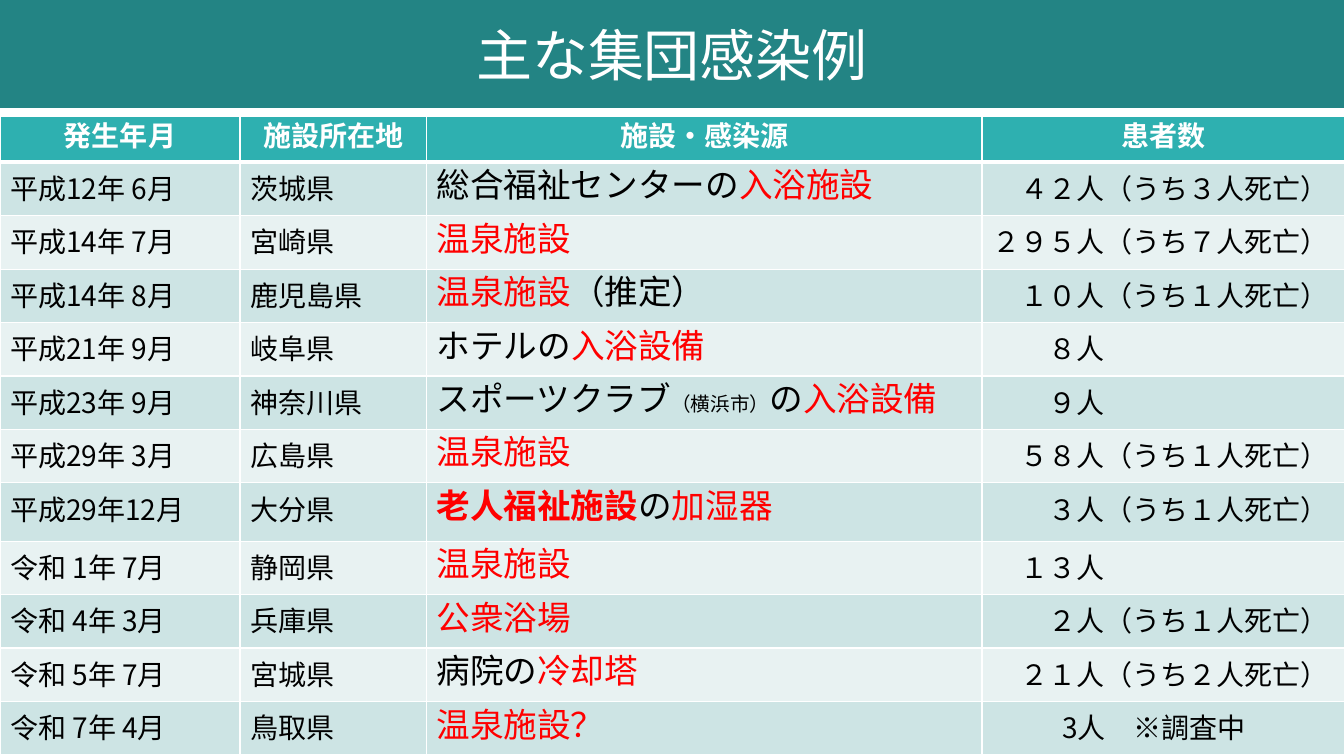
from dataclasses import dataclass

from lxml import etree
from pptx import Presentation
from pptx.dml.color import RGBColor
from pptx.enum.shapes import MSO_SHAPE
from pptx.enum.text import MSO_ANCHOR, PP_ALIGN
from pptx.oxml.ns import qn
from pptx.util import Inches, Pt

RECTANGLE = MSO_SHAPE.RECTANGLE
MIDDLE = MSO_ANCHOR.MIDDLE
LEFT, CENTER = PP_ALIGN.LEFT, PP_ALIGN.CENTER

TITLE = "主な集団感染例"
HEADINGS = ("発生年月", "施設所在地", "施設・感染源", "患者数")
PLAIN, SOURCE, STRONG, SMALL = "plain", "source", "strong", "small"

# month, prefecture, facility parts, indent of the count in characters, count
OUTBREAKS = [
    ("平成12年 6月", "茨城県", [("総合福祉センターの", PLAIN), ("入浴施設", SOURCE)], 1, "４２人（うち３人死亡）"),
    ("平成14年 7月", "宮崎県", [("温泉施設", SOURCE)], 0, "２９５人（うち７人死亡）"),
    ("平成14年 8月", "鹿児島県", [("温泉施設", SOURCE), ("（推定）", PLAIN)], 1, "１０人（うち１人死亡）"),
    ("平成21年 9月", "岐阜県", [("ホテルの", PLAIN), ("入浴設備", SOURCE)], 2, "８人"),
    ("平成23年 9月", "神奈川県",
     [("スポーツクラブ", PLAIN), ("（横浜市）", SMALL), ("の", PLAIN), ("入浴設備", SOURCE)], 2, "９人"),
    ("平成29年 3月", "広島県", [("温泉施設", SOURCE)], 1, "５８人（うち１人死亡）"),
    ("平成29年12月", "大分県",
     [("老人福祉施設", STRONG), ("の", PLAIN), ("加湿器", SOURCE)], 2, "３人（うち１人死亡）"),
    ("令和 1年 7月", "静岡県", [("温泉施設", SOURCE)], 1, "１３人"),
    ("令和 4年 3月", "兵庫県", [("公衆浴場", SOURCE)], 2, "２人（うち１人死亡）"),
    ("令和 5年 7月", "宮城県", [("病院の", PLAIN), ("冷却塔", SOURCE)], 1, "２１人（うち２人死亡）"),
    ("令和 7年 4月", "鳥取県", [("温泉施設？", SOURCE)], 2.5, "3人　※調査中"),
]

SLIDE_WIDTH, SLIDE_HEIGHT = 13.33, 7.5
TITLE_HEIGHT = 1.07
TABLE_TOP = 1.15
COLUMN_WIDTHS = (2.38, 1.85, 5.51, 3.6)
HEADING_HEIGHT, ROW_HEIGHT, TALL_ROW_HEIGHT = 0.46, 0.53, 0.58
TALL_ROW = 7


@dataclass(frozen=True)
class Theme:
    title_fill: str = "238484"
    heading_fill: str = "2EB0B0"
    bands: tuple = ("CDE4E4", "E8F2F2")
    white: str = "FFFFFF"
    text: str = "000000"
    accent: str = "FF0000"
    heading_font: str = "Arial"
    font: str = "Noto Sans CJK JP"
    title_size: int = 40
    body_size: int = 20
    facility_size: int = 24
    small_size: int = 14
    line_spacing: float = 28.8
    rule: int = 1
    heading_rule: int = 3


THEME = Theme()
FACILITY_STYLES = {
    PLAIN: (THEME.facility_size, THEME.text, False),
    SOURCE: (THEME.facility_size, THEME.accent, False),
    STRONG: (THEME.facility_size, THEME.accent, True),
    SMALL: (THEME.small_size, THEME.text, False),
}


def style_run(run, font_name, size, color, bold=False):
    run.font.name = font_name
    run.font.size = Pt(size)
    run.font.bold = bold
    run.font.color.rgb = RGBColor.from_string(color)
    east_asian = etree.SubElement(run.font._element, qn("a:ea"))
    east_asian.set("typeface", font_name)


def paint_cell(cell, fill, top=THEME.rule, bottom=THEME.rule):
    properties = cell._tc.get_or_add_tcPr()
    edges = (("a:lnL", THEME.rule), ("a:lnR", THEME.rule), ("a:lnT", top), ("a:lnB", bottom))
    for edge, width in edges:
        line = etree.SubElement(properties, qn(edge), w=str(Pt(width)))
        line_fill = etree.SubElement(line, qn("a:solidFill"))
        etree.SubElement(line_fill, qn("a:srgbClr"), val=THEME.white)
    cell.fill.solid()
    cell.fill.fore_color.rgb = RGBColor.from_string(fill)


def write_cell(cell, parts, indent=0):
    paragraph = cell.text_frame.paragraphs[0]
    paragraph.alignment = LEFT
    paragraph.line_spacing = Pt(THEME.line_spacing)
    if indent:
        properties = paragraph._p.get_or_add_pPr()
        properties.set("marL", str(Pt(indent * THEME.body_size)))
        properties.set("indent", "0")
    for text, style in parts:
        run = paragraph.add_run()
        run.text = text
        style_run(run, THEME.font, *style)


def add_title(slide):
    banner = slide.shapes.add_shape(RECTANGLE, 0, 0, Inches(SLIDE_WIDTH), Inches(TITLE_HEIGHT))
    banner.shadow.inherit = False
    banner.fill.solid()
    banner.fill.fore_color.rgb = RGBColor.from_string(THEME.title_fill)
    banner.line.fill.background()
    frame = banner.text_frame
    frame.text = TITLE
    frame.vertical_anchor = MIDDLE
    frame.margin_top = frame.margin_bottom = Inches(0.2)
    paragraph = frame.paragraphs[0]
    paragraph.alignment = CENTER
    style_run(paragraph.runs[0], THEME.font, THEME.title_size, THEME.white)


def add_outbreaks(slide):
    heights = [HEADING_HEIGHT] + [ROW_HEIGHT] * len(OUTBREAKS)
    heights[TALL_ROW] = TALL_ROW_HEIGHT
    table = slide.shapes.add_table(
        len(heights), len(HEADINGS), 0, Inches(TABLE_TOP),
        Inches(SLIDE_WIDTH), Inches(sum(heights))).table
    for column, width in zip(table.columns, COLUMN_WIDTHS):
        column.width = Inches(width)
    for row, height in zip(table.rows, heights):
        row.height = Inches(height)

    for index, heading in enumerate(HEADINGS):
        cell = table.cell(0, index)
        paint_cell(cell, THEME.heading_fill, bottom=THEME.heading_rule)
        cell.text_frame.text = heading
        paragraph = cell.text_frame.paragraphs[0]
        paragraph.alignment = CENTER
        style_run(paragraph.runs[0], THEME.heading_font, THEME.body_size, THEME.white, True)

    body = (THEME.body_size, THEME.text)
    for number, (month, prefecture, facility, indent, patients) in enumerate(OUTBREAKS, 1):
        cells = table.rows[number].cells
        for cell in cells:
            paint_cell(cell, THEME.bands[(number - 1) % 2],
                       top=THEME.heading_rule if number == 1 else THEME.rule)
        month_cell, prefecture_cell, facility_cell, patients_cell = cells
        write_cell(month_cell, [(month, body)])
        write_cell(prefecture_cell, [(prefecture, body)])
        write_cell(facility_cell, [(text, FACILITY_STYLES[kind]) for text, kind in facility])
        write_cell(patients_cell, [(patients, body)], indent)


def main():
    presentation = Presentation()
    presentation.slide_width = Inches(SLIDE_WIDTH)
    presentation.slide_height = Inches(SLIDE_HEIGHT)
    slide = presentation.slides.add_slide(presentation.slide_layouts[6])
    add_title(slide)
    add_outbreaks(slide)
    presentation.save("out.pptx")


if __name__ == "__main__":
    main()
